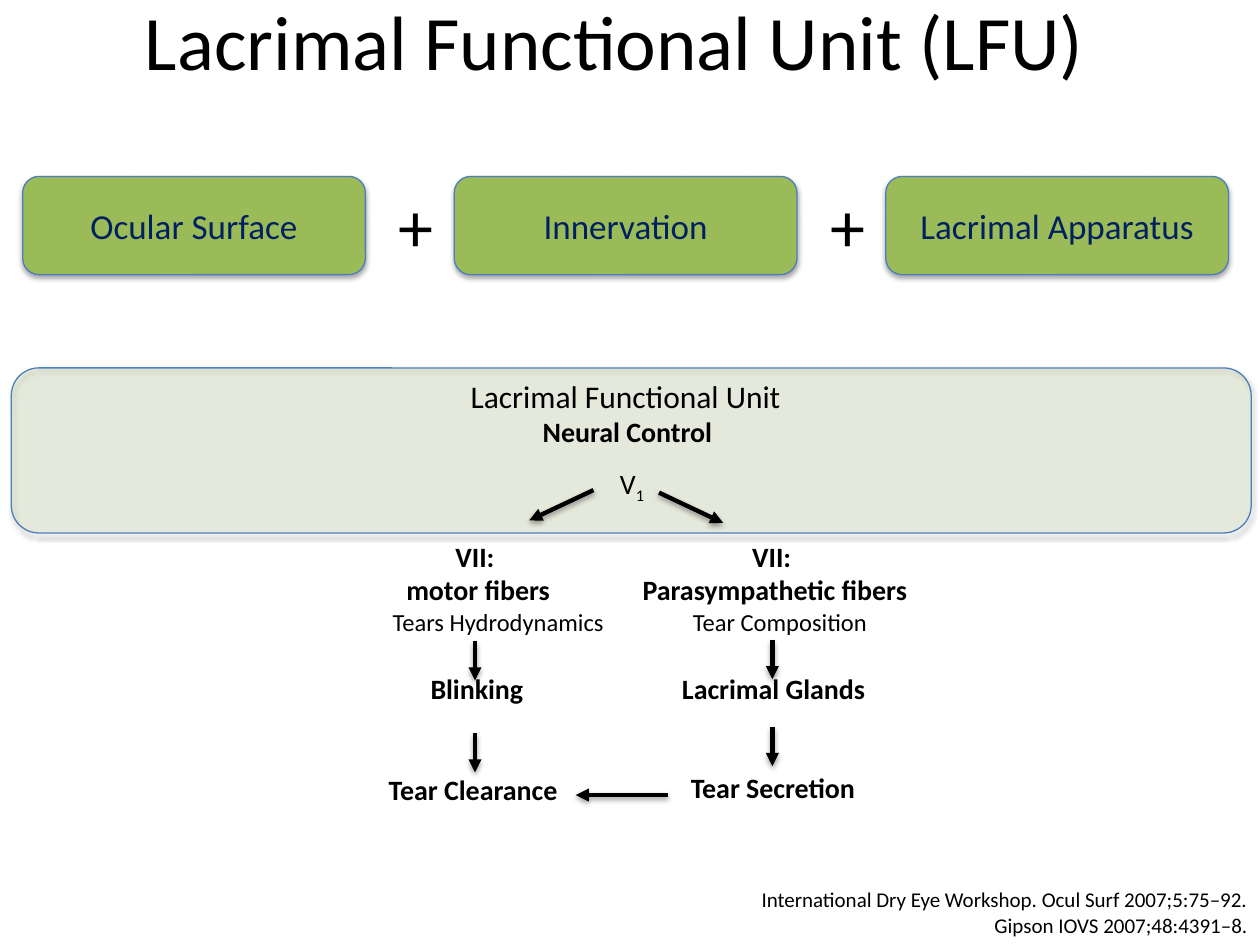
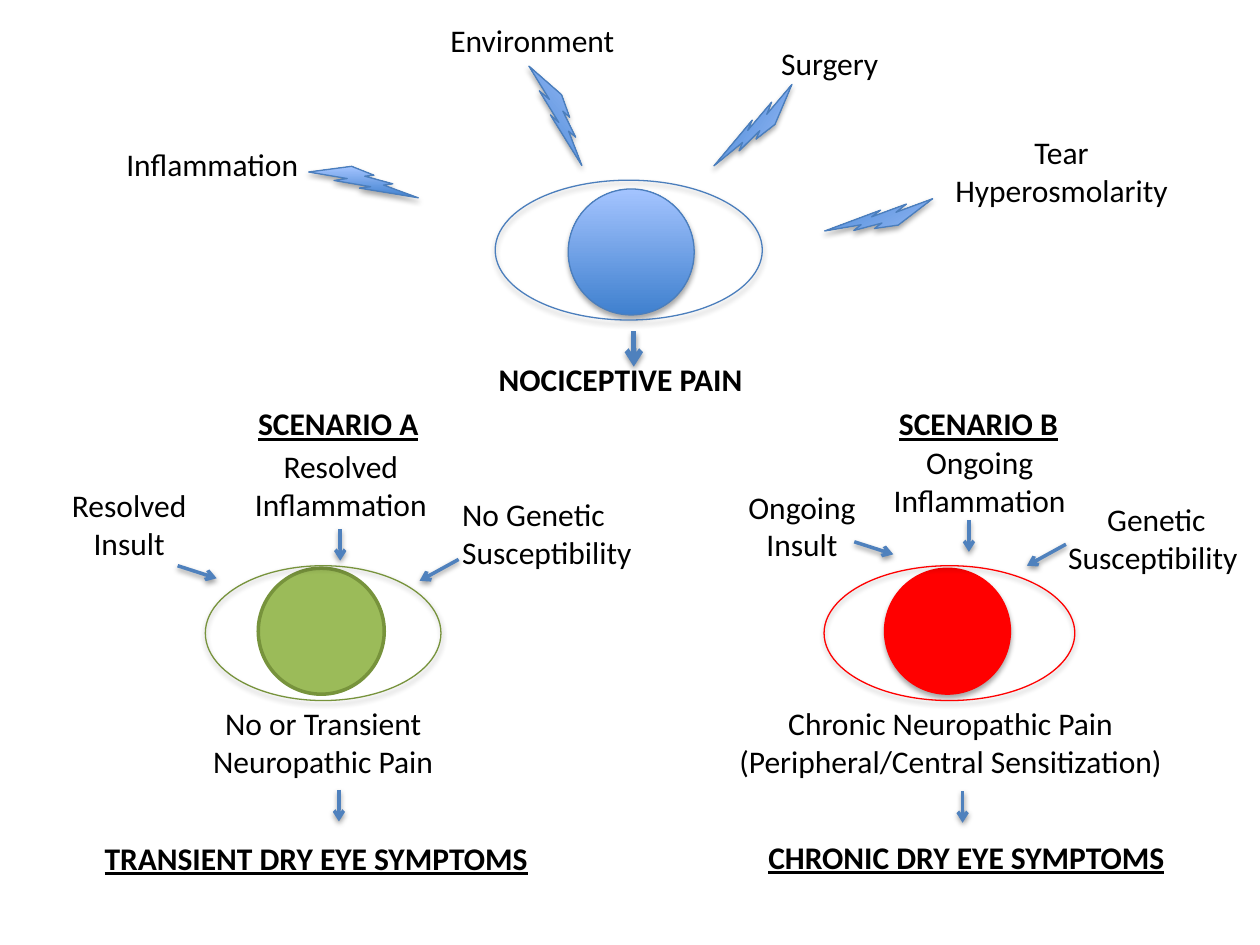
from lxml import etree
from pptx import Presentation
from pptx.dml.color import RGBColor
from pptx.enum.shapes import MSO_CONNECTOR, MSO_SHAPE
from pptx.enum.text import MSO_ANCHOR, PP_ALIGN
from pptx.oxml.ns import qn
from pptx.util import Inches, Pt

LEFT, CENTER, RIGHT = PP_ALIGN.LEFT, PP_ALIGN.CENTER, PP_ALIGN.RIGHT
MIDDLE, TOP = MSO_ANCHOR.MIDDLE, MSO_ANCHOR.TOP
ROUNDED, ELLIPSE = MSO_SHAPE.ROUNDED_RECTANGLE, MSO_SHAPE.OVAL
BOLT, STRAIGHT = MSO_SHAPE.LIGHTNING_BOLT, MSO_CONNECTOR.STRAIGHT

FONT = "Calibri"
BLACK, NAVY, RED = "000000", "002060", "FF0000"
GREEN, DARK_GREEN = "9BBB59", "77933C"
OUTLINE, ARROW_BLUE = "4B7EBC", "4F81BD"
BLUE_GRADIENT = ("3F80CE", "A4C4FF")


def color(value):
    return RGBColor.from_string(value)


def add_shadow(shape, alpha=35, distance=1.8):
    """Give a shape or connector a soft shadow straight below it."""
    effects = etree.SubElement(shape._element.spPr, qn("a:effectLst"))
    outer = etree.SubElement(
        effects, qn("a:outerShdw"), blurRad=str(Pt(3.1)), dist=str(Pt(distance)),
        dir="5400000", rotWithShape="0")
    tint = etree.SubElement(outer, qn("a:srgbClr"), val=BLACK)
    etree.SubElement(tint, qn("a:alpha"), val=str(alpha * 1000))


def add_span(para, text, size, ink=BLACK, bold=False, underline=False, baseline=0):
    span = para.add_run()
    span.text = text
    font = span.font
    font.name, font.size, font.color.rgb = FONT, Pt(size), color(ink)
    font.bold, font.underline = bold, underline
    if baseline:
        span._r.get_or_add_rPr().set("baseline", str(baseline * 1000))


def write(frame, text, size=18, align=CENTER, anchor=TOP, **style):
    """Fill a text frame, one paragraph for each line of text."""
    frame.word_wrap = True
    frame.vertical_anchor = anchor
    for index, line in enumerate(text.split("\n")):
        para = frame.add_paragraph() if index else frame.paragraphs[0]
        para.alignment = align
        add_span(para, line, size, **style)


def place(shape, left, top, width, height):
    shape.left, shape.top = Inches(left), Inches(top)
    shape.width, shape.height = Inches(width), Inches(height)


def add_label(page, text, left, top, width, height=0.4, **style):
    box = page.shapes.add_textbox(*map(Inches, (left, top, width, height)))
    write(box.text_frame, text, **style)
    return box


def add_figure(page, kind, left, top, width, height, fill=None, line=OUTLINE,
               weight=0.75, shadow=True):
    """Draw a preset shape; fill is None, one colour or a pair for a gradient."""
    shape = page.shapes.add_shape(kind, *map(Inches, (left, top, width, height)))
    if fill is None:
        shape.fill.background()
    elif isinstance(fill, tuple):
        shape.fill.gradient()
        shape.fill.gradient_angle = 90
        for stop, value in zip(shape.fill.gradient_stops, fill):
            stop.color.rgb = color(value)
    else:
        shape.fill.solid()
        shape.fill.fore_color.rgb = color(fill)
    shape.line.color.rgb = color(line)
    shape.line.width = Pt(weight)
    if shadow:
        add_shadow(shape)
    else:
        shape.shadow.inherit = False
    return shape


def add_arrow(page, left, top, across, down, ink=BLACK, weight=2.5, head="triangle"):
    arrow = page.shapes.add_connector(
        STRAIGHT, *map(Inches, (left, top, left + across, top + down)))
    arrow.line.color.rgb = color(ink)
    arrow.line.width = Pt(weight)
    etree.SubElement(arrow.line._get_or_add_ln(), qn("a:tailEnd"), type=head)
    add_shadow(arrow, alpha=38, distance=1.6)


def add_blue_arrow(page, left, top, across, down, weight=2):
    add_arrow(page, left, top, across, down, ARROW_BLUE, weight, "arrow")


def add_eye(page, pupil, lid, fill, line, pupil_weight=0.75, pupil_shadow=True):
    add_figure(page, ELLIPSE, *pupil, 1, 1, fill, line, pupil_weight, pupil_shadow)
    add_figure(page, ELLIPSE, *lid, line=line)


def build_unit_page(deck):
    page = deck.slides.add_slide(deck.slide_layouts[5])

    # Neural control panel
    panel = add_figure(page, ROUNDED, 0.09, 2.92, 9.84, 1.31, GREEN)
    tint = panel._element.spPr.find(qn("a:solidFill"))[0]
    etree.SubElement(tint, qn("a:alpha"), val="15000")
    add_label(page, "Lacrimal Functional Unit", 2.02, 2.94, 5.89)
    add_label(page, "Neural Control", 3.73, 3.24, 2.5, size=16, bold=True)
    nerve = add_label(page, "V", 4.77, 3.65, 0.49, size=16)
    add_span(nerve.text_frame.paragraphs[0], "1", 16, baseline=-25)

    # Title
    place(page.shapes.title, 0.17, -0.31, 9.42, 1.25)
    write(page.shapes.title.text_frame, "Lacrimal Functional Unit (LFU)",
          size=44, anchor=MIDDLE)

    # Three components joined by plus signs
    step = 3.425
    for index, part in enumerate(("Ocular Surface", "Innervation", "Lacrimal Apparatus")):
        left = 0.18 + index * step
        box = add_figure(page, ROUNDED, left, 1.4, 2.72, 0.78, GREEN)
        write(box.text_frame, part, size=20, anchor=MIDDLE, ink=NAVY)
        if index:
            add_label(page, "+", left - 0.54, 1.4, 0.4, 0.77, size=40)

    # Motor and parasympathetic pathways
    for text, left, top, width in (
            ("VII: \nmotor fibers", 3.06, 4.23, 1.47),
            ("VII: \nParasympathetic fibers", 4.95, 4.23, 2.4),
            ("Blinking", 2.74, 5.28, 2.09),
            ("Lacrimal Glands", 5.2, 5.28, 1.88),
            ("Tear Clearance", 2.97, 6.08, 1.57),
            ("Tear Secretion", 5.35, 6.07, 1.57)):
        add_label(page, text, left, top, width, size=16, bold=True)
    add_label(page, "Tears Hydrodynamics", 2.74, 4.77, 2.15, 0.34, size=14, align=RIGHT)
    add_label(page, "Tear Composition", 4.83, 4.77, 2.72, 0.34, size=14)

    for left, tops in ((3.77, (5.09, 5.82)), (6.13, (5.08, 5.77))):
        for top in tops:
            add_arrow(page, left, top, 0, 0.31)
    add_arrow(page, 5.3, 6.31, -0.73, 0)
    add_arrow(page, 4.71, 3.89, -0.51, 0.24)
    add_arrow(page, 5.23, 3.91, 0.51, 0.24)

    # References
    add_label(page, "International Dry Eye Workshop. Ocul Surf 2007;5:75–92.\n"
              "Gipson IOVS 2007;48:4391–8.", 5.45, 6.99, 4.55, 0.5, size=12, align=RIGHT)


def add_scenario(page, headings, factors, outcome, arrow_starts):
    for text, left, top, width in headings:
        add_label(page, text, left, top, width, bold=True, underline=True)
    for text, left, top, width, align in factors:
        add_label(page, text, left, top, width, 0.71, align=align)
    add_label(page, *outcome, 0.71)
    # Insult, genetics, inflammation and outcome arrows
    steps = ((0.31, 0.1), (-0.31, 0.17), (0, 0.25), (0, 0.25))
    for start, step in zip(arrow_starts, steps):
        add_blue_arrow(page, *start, *step)


def build_pain_page(deck):
    page = deck.slides.add_slide(deck.slide_layouts[6])

    # Eyes
    add_eye(page, (4.51, 1.5), (3.93, 1.43, 2.12, 1.11), BLUE_GRADIENT, OUTLINE)
    add_eye(page, (2.05, 4.51), (1.63, 4.49, 1.87, 1.07), GREEN, DARK_GREEN,
            pupil_weight=2, pupil_shadow=False)
    add_eye(page, (7.02, 4.51), (6.54, 4.49, 1.99, 1.07), RED, RED)

    # Triggers with their bolts
    for text, left, top, bolt_left, bolt_top, angle in (
            ("Environment", 3.05, 0.12, 3.99, 0.78, 48.7),
            ("Surgery", 5.41, 0.3, 5.56, 0.88, 120.5),
            ("Inflammation", 0.51, 1.1, 2.45, 1.32, 0),
            ("Tear Hyperosmolarity", 7.25, 1.01, 6.55, 1.6, 150.1)):
        add_label(page, text, left, top, 2.35)
        bolt = add_figure(page, BOLT, bolt_left, bolt_top, 0.87, 0.25, BLUE_GRADIENT)
        bolt.rotation = angle

    add_blue_arrow(page, 5.03, 2.63, 0, 0.28, weight=3)
    add_label(page, "NOCICEPTIVE PAIN", 3.86, 2.81, 2.36, align=LEFT, bold=True)

    # Scenario A: the insult resolves
    add_scenario(
        page,
        headings=(("SCENARIO A", 1.81, 3.16, 1.75),
                  ("TRANSIENT DRY EYE SYMPTOMS", 0.51, 6.61, 4)),
        factors=(("Resolved Insult", 0.33, 3.81, 1.39, CENTER),
                 ("Resolved Inflammation", 1.92, 3.5, 1.57, CENTER),
                 ("No Genetic Susceptibility", 3.57, 3.88, 1.7, LEFT)),
        outcome=("No or Transient Neuropathic Pain", 1.45, 5.54, 2.23),
        arrow_starts=((1.41, 4.49), (3.64, 4.44), (2.7, 4.2), (2.69, 6.27)))

    # Scenario B: the insult goes on
    add_scenario(
        page,
        headings=(("SCENARIO B", 6.89, 3.16, 1.75),
                  ("CHRONIC DRY EYE SYMPTOMS", 5.67, 6.6, 4)),
        factors=(("Ongoing Insult", 5.67, 3.82, 1.39, CENTER),
                 ("Ongoing Inflammation", 6.99, 3.47, 1.57, CENTER),
                 (" Genetic Susceptibility", 8.3, 3.92, 1.7, CENTER)),
        outcome=("Chronic Neuropathic Pain\n(Peripheral/Central Sensitization)",
                 5.69, 5.54, 3.71),
        arrow_starts=((6.78, 4.3), (8.46, 4.32), (7.69, 4.13), (7.64, 6.28)))


def main():
    deck = Presentation()
    deck.slide_width, deck.slide_height = Inches(10), Inches(7.5)
    build_unit_page(deck)
    build_pain_page(deck)
    deck.save("out.pptx")


if __name__ == "__main__":
    main()
